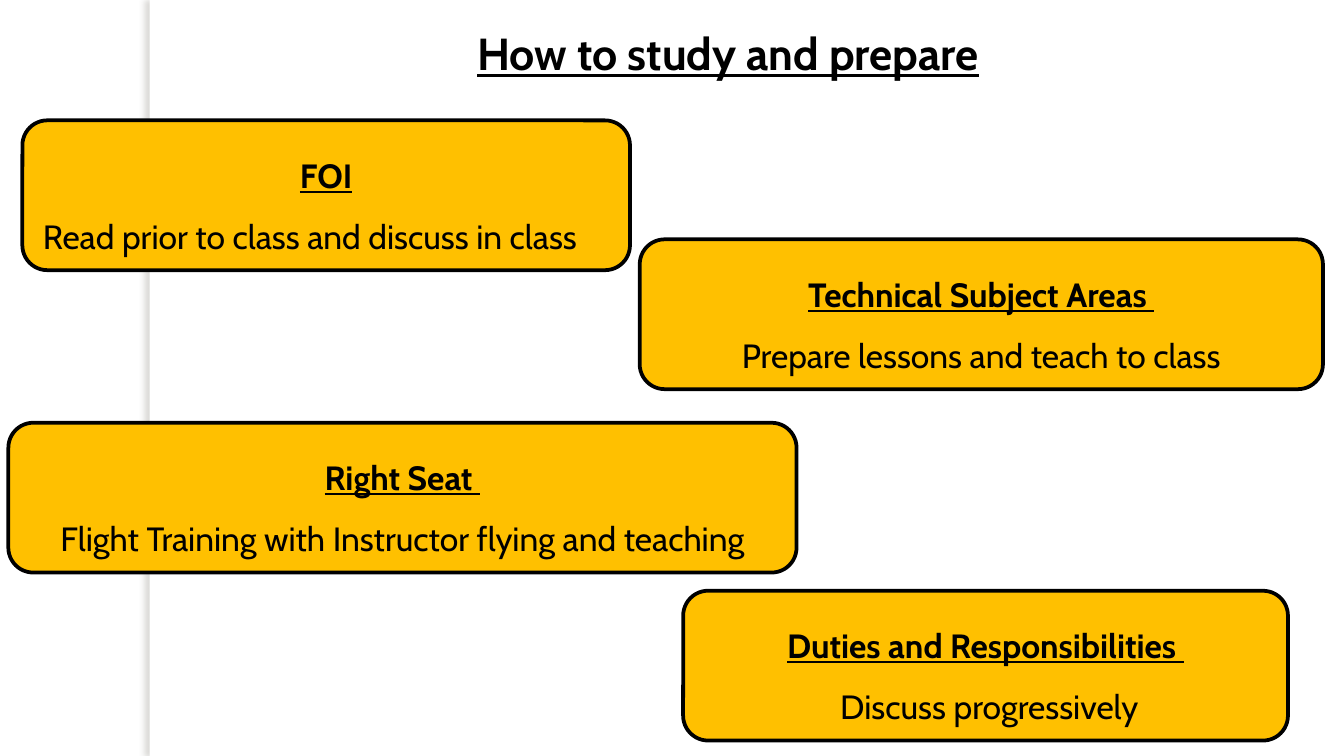
from lxml import etree
from pptx import Presentation
from pptx.dml.color import RGBColor
from pptx.enum.shapes import MSO_SHAPE
from pptx.enum.text import MSO_ANCHOR, MSO_AUTO_SIZE, PP_ALIGN
from pptx.oxml.ns import qn
from pptx.util import Pt

RECT, ROUNDED = MSO_SHAPE.RECTANGLE, MSO_SHAPE.ROUNDED_RECTANGLE
LEFT, CENTER = PP_ALIGN.LEFT, PP_ALIGN.CENTER
MIDDLE = MSO_ANCHOR.MIDDLE
GROW = MSO_AUTO_SIZE.SHAPE_TO_FIT_TEXT

# Content: heading, advice, advice alignment, (left, top, width) in px
TITLE = "How to study and prepare"
TOPICS = [
    ("Right Seat ", "Flight Training with Instructor flying and teaching",
     CENTER, (6, 302, 563)),
    ("FOI", "Read prior to class and discuss in class",
     LEFT, (16, 86, 434)),
    ("Technical Subject Areas ", "Prepare lessons and teach to class",
     CENTER, (457, 171, 488)),
    ("Duties and Responsibilities ", " Discuss progressively",
     CENTER, (488, 422, 432)),
]

THEME = {
    "font": "Cabin",
    "ink": RGBColor(0x00, 0x00, 0x00),
    "paper": RGBColor(0xFF, 0xFF, 0xFF),
    "card": RGBColor(0xFF, 0xC0, 0x00),
    "shadow": "736F63",
    "title_size": Pt(24),
    "card_size": Pt(18),
    "outline": Pt(2),
    "line_spacing": 1.5,
}

# Layout, 96 px to the inch
PX = 9525
SLIDE_W, SLIDE_H = 960, 540
STRIP = (107, 0, 8, SLIDE_H)
TITLE_BOX = (152, 14, 736, 48)
CARD_H = 107


def emu(box):
    return [length * PX for length in box]


def write(paragraph, text, size, align, heading):
    paragraph.text = text
    paragraph.alignment = align
    font = paragraph.runs[0].font
    font.name, font.size = THEME["font"], size
    font.bold = font.underline = heading
    font.color.rgb = THEME["ink"]


def add_filled(slide, kind, box, color):
    shape = slide.shapes.add_shape(kind, *emu(box))
    shape.shadow.inherit = False
    shape.fill.solid()
    shape.fill.fore_color.rgb = color
    return shape


def add_strip(slide):
    strip = add_filled(slide, RECT, STRIP, THEME["paper"])
    strip.line.fill.background()
    effects = strip._element.spPr.find(qn("a:effectLst"))
    shadow = etree.SubElement(
        effects, qn("a:outerShdw"), blurRad=str(Pt(3)), dist=str(Pt(3)),
        dir="10800000", algn="ctr", rotWithShape="0")
    color = etree.SubElement(shadow, qn("a:srgbClr"), val=THEME["shadow"])
    etree.SubElement(color, qn("a:alpha"), val="25000")


def add_title(slide):
    frame = slide.shapes.add_textbox(*emu(TITLE_BOX)).text_frame
    frame.word_wrap = True
    frame.auto_size = GROW
    write(frame.paragraphs[0], TITLE, THEME["title_size"], CENTER, True)


def add_topic(slide, heading, advice, align, place):
    card = add_filled(slide, ROUNDED, (*place, CARD_H), THEME["card"])
    card.line.color.rgb = THEME["ink"]
    card.line.width = THEME["outline"]
    frame = card.text_frame
    frame.word_wrap = True
    frame.auto_size = GROW
    frame.vertical_anchor = MIDDLE
    size = THEME["card_size"]
    write(frame.paragraphs[0], heading, size, CENTER, True)
    write(frame.add_paragraph(), advice, size, align, False)
    for paragraph in frame.paragraphs:
        paragraph.line_spacing = THEME["line_spacing"]


def main():
    deck = Presentation()
    deck.slide_width, deck.slide_height = emu((SLIDE_W, SLIDE_H))
    slide = deck.slides.add_slide(deck.slide_layouts[6])
    slide.background.fill.solid()
    slide.background.fill.fore_color.rgb = THEME["paper"]
    add_strip(slide)
    add_title(slide)
    for topic in TOPICS:
        add_topic(slide, *topic)
    deck.save("out.pptx")


if __name__ == "__main__":
    main()
